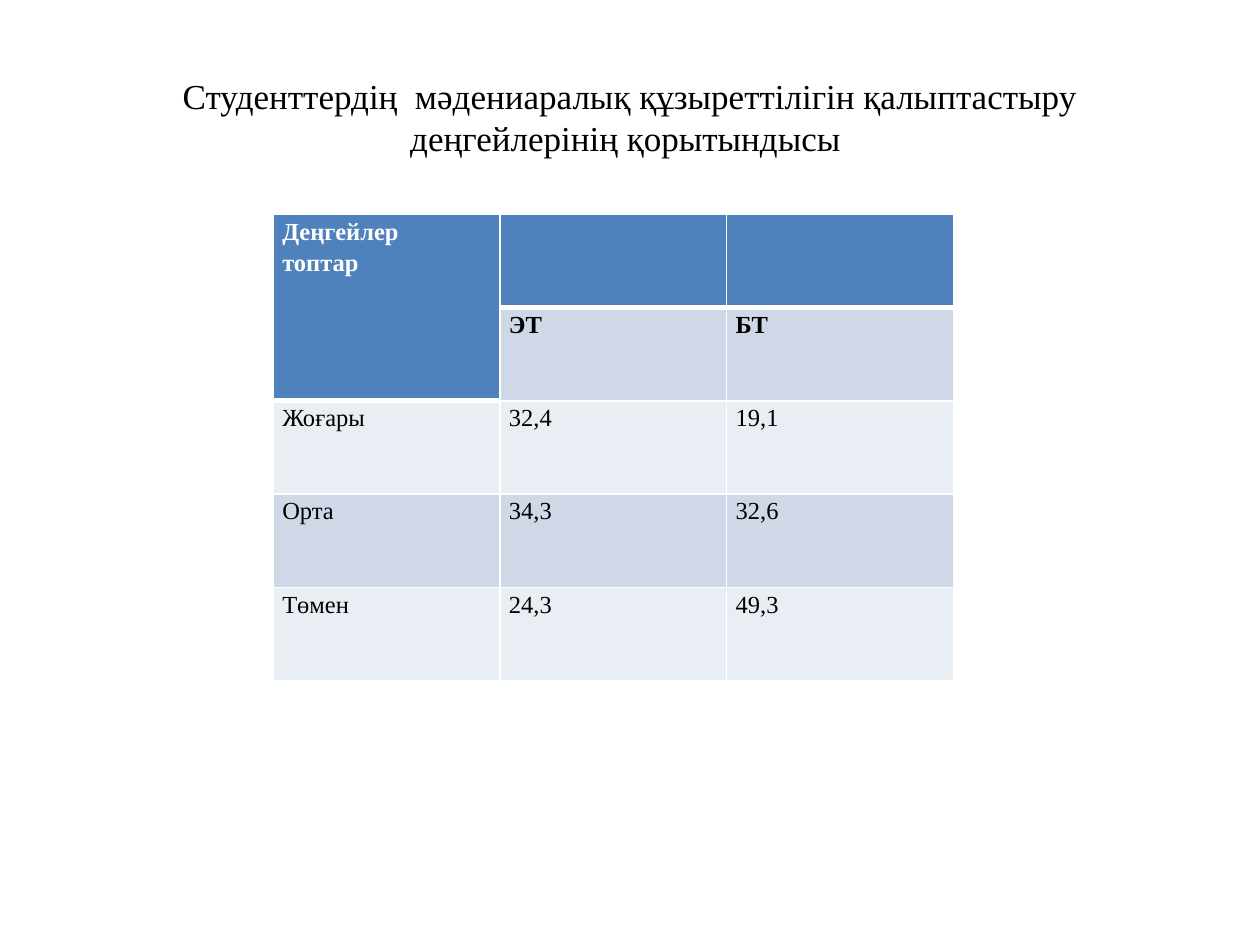
from lxml import etree
from pptx import Presentation
from pptx.dml.color import RGBColor
from pptx.enum.text import MSO_ANCHOR, PP_ALIGN
from pptx.oxml.ns import qn
from pptx.util import Cm, Pt

CENTER, JUSTIFY = PP_ALIGN.CENTER, PP_ALIGN.JUSTIFY
MIDDLE = MSO_ANCHOR.MIDDLE

TITLE = "Студенттердің  мәдениаралық құзыреттілігін қалыптастыру деңгейлерінің қорытындысы "
ROWS = [
    ["Деңгейлер\nтоптар", "", ""],
    ["", "ЭТ", "БТ"],
    ["Жоғары", "32,4", "19,1"],
    ["Орта", "34,3", "32,6"],
    ["Төмен", "24,3", "49,3"],
]
HEADING_ROWS = 2
THEME = {
    "font": "Times New Roman",
    "title_size": 20,
    "table_size": 14,
    "text": "000000",
    "header_text": "FFFFFF",
    "header_fill": "4F81BD",
    "bands": ["E9EDF4", "D0D8E8"],
    "border": "FFFFFF",
    "thin": 1,
    "thick": 3,
}
TITLE_BOX = (Cm(1.27), Cm(0.76), Cm(22.86), Cm(3.18))
TABLE_LEFT, TABLE_TOP = Cm(5.51), Cm(4.32)
COLUMN_WIDTH, ROW_HEIGHT = Cm(4.57), Cm(1.88)
CELL_FORMAT = {"margin_left": Cm(0.18), "margin_right": Cm(0.18),
               "margin_top": 0, "margin_bottom": 0}


def apply_format(target, values):
    for name, value in values.items():
        setattr(target, name, value)


def write_text(frame, text, size, color, bold, paragraph_format):
    frame.text = text
    for paragraph in frame.paragraphs:
        apply_format(paragraph, paragraph_format)
        for run in paragraph.runs:
            apply_format(run.font, {"name": THEME["font"], "size": Pt(size), "bold": bold})
            run.font.color.rgb = RGBColor.from_string(color)


def is_header(row, column):
    return row == 0 or (row < HEADING_ROWS and column == 0)


def set_borders(cell, widths):
    properties = cell._tc.get_or_add_tcPr()
    for side, width in widths.items():
        line = etree.SubElement(properties, qn(f"a:ln{side}"), w=str(Pt(width)))
        fill = etree.SubElement(line, qn("a:solidFill"))
        etree.SubElement(fill, qn("a:srgbClr"), val=THEME["border"])


def border_widths(row, column):
    header = is_header(row, column)
    thin, thick = THEME["thin"], THEME["thick"]
    below_header = row > 0 and not header and is_header(row - 1, column)
    last_header = header and not is_header(row + 1, column)
    return {"L": thin, "R": thin,
            "T": thick if below_header else thin,
            "B": thick if last_header or (row, column) == (0, 0) else thin}


def add_title(slide):
    frame = slide.shapes.add_textbox(*TITLE_BOX).text_frame
    apply_format(frame, {"word_wrap": True, "vertical_anchor": MIDDLE})
    write_text(frame, TITLE, THEME["title_size"], THEME["text"], False, {"alignment": CENTER})


def add_levels_table(slide):
    row_count, column_count = len(ROWS), len(ROWS[0])
    table = slide.shapes.add_table(
        row_count, column_count, TABLE_LEFT, TABLE_TOP,
        COLUMN_WIDTH * column_count, ROW_HEIGHT * row_count).table
    for column in table.columns:
        column.width = COLUMN_WIDTH
    for row in table.rows:
        row.height = ROW_HEIGHT
    for row, texts in enumerate(ROWS):
        for column, text in enumerate(texts):
            cell = table.cell(row, column)
            header = is_header(row, column)
            apply_format(cell, CELL_FORMAT)
            set_borders(cell, border_widths(row, column))
            cell.fill.solid()
            fill = THEME["header_fill"] if header else THEME["bands"][row % 2]
            cell.fill.fore_color.rgb = RGBColor.from_string(fill)
            write_text(cell.text_frame, text, THEME["table_size"],
                       THEME["header_text" if header else "text"], row < HEADING_ROWS,
                       {"alignment": JUSTIFY, "line_spacing": 1.15})
    table.cell(0, 0).merge(table.cell(HEADING_ROWS - 1, 0))


def main():
    presentation = Presentation()
    apply_format(presentation, {"slide_width": Cm(25.4), "slide_height": Cm(19.05)})
    slide = presentation.slides.add_slide(presentation.slide_layouts[6])
    add_title(slide)
    add_levels_table(slide)
    presentation.save("out.pptx")


if __name__ == "__main__":
    main()
